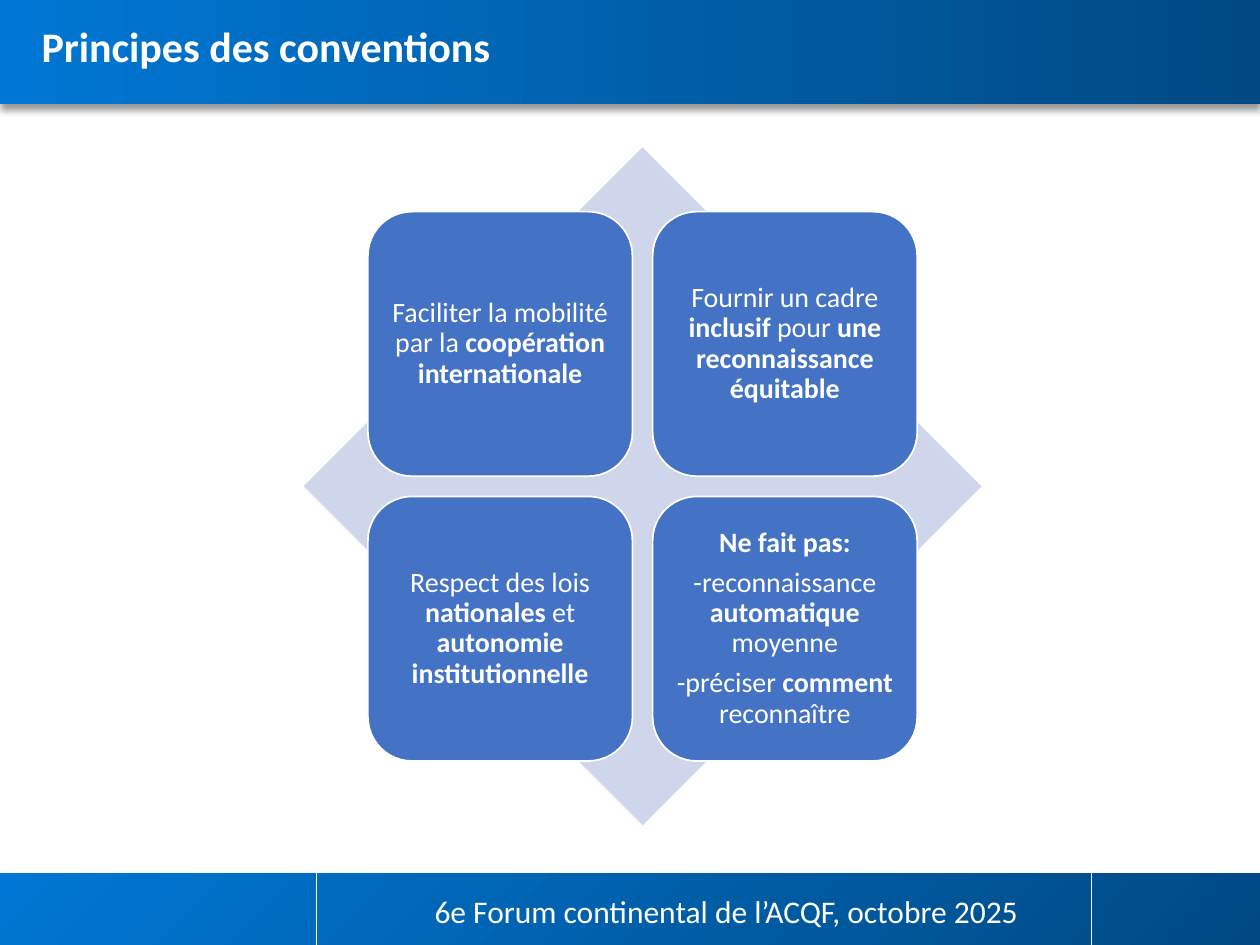
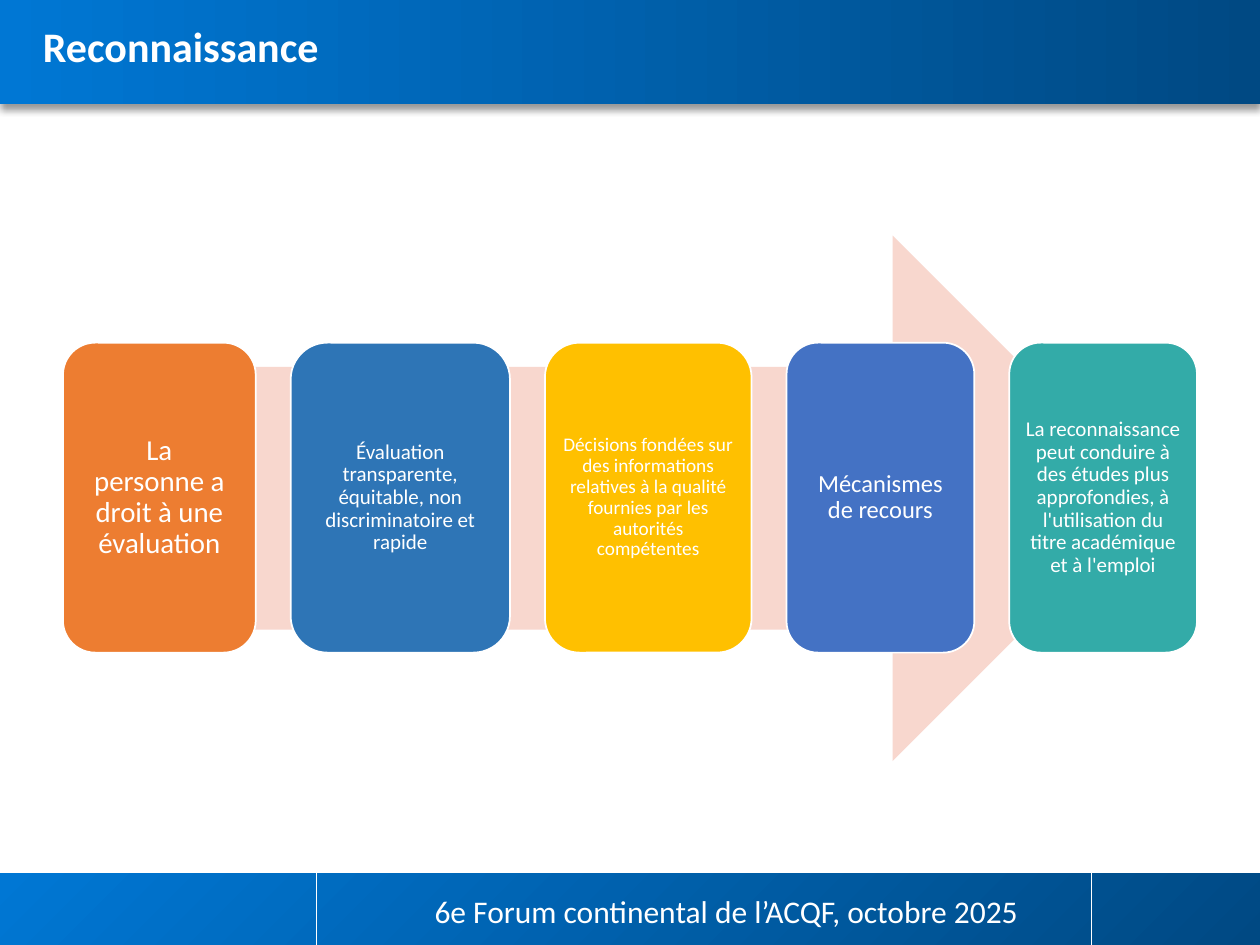
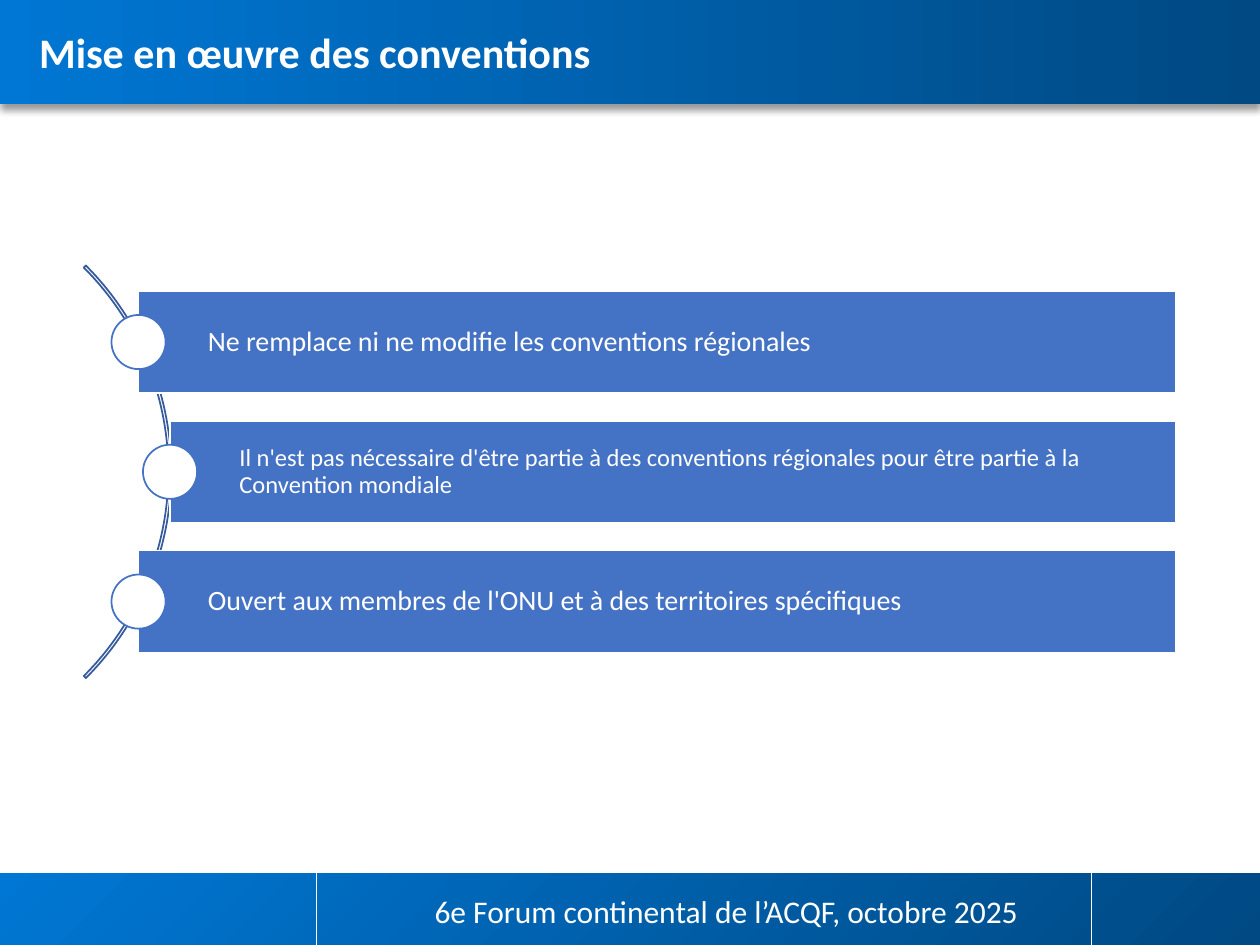
from dataclasses import dataclass

from lxml.etree import SubElement
from pptx import Presentation
from pptx.dml.color import RGBColor
from pptx.enum.shapes import MSO_CONNECTOR, MSO_SHAPE as Preset
from pptx.enum.text import MSO_ANCHOR as Anchor, MSO_AUTO_SIZE, PP_ALIGN as Align
from pptx.oxml.ns import qn
from pptx.util import Inches, Pt

FONT = "Calibri"
WHITE = "FFFFFF"
BLUE = "4472C4"
BAND_BRIGHT, BAND_DARK = "0077D4", "004983"
FOOTER = "6e Forum continental de l’ACQF, octobre 2025"
SLIDE_WIDTH, SLIDE_HEIGHT = 10, 7.5


@dataclass(frozen=True)
class Box:
    left: float
    top: float
    width: float
    height: float

    def emu(self) -> tuple:
        return tuple(Inches(v) for v in (self.left, self.top, self.width, self.height))


@dataclass(frozen=True)
class Step:
    text: str
    width: float
    color: str
    size: float
    inset: float


@dataclass(frozen=True)
class Rule:
    text: str
    left: float
    size: float


PRINCIPLES = [
    ["Faciliter la mobilité par la **coopération internationale**"],
    ["Fournir un cadre **inclusif** pour **une reconnaissance équitable**"],
    ["Respect des lois **nationales** et **autonomie institutionnelle**"],
    ["**Ne fait pas:**", "-reconnaissance **automatique** moyenne",
     "-préciser **comment** reconnaître"],
]

STEPS = [
    Step("La personne a droit à une évaluation", 1.53, "ED7D31", 16.5, 0.15),
    Step("Évaluation transparente, équitable, non discriminatoire et rapide",
         1.74, "2E75B6", 12, 0.05),
    Step("Décisions fondées sur des informations relatives à la qualité "
         "fournies par les autorités compétentes", 1.64, "FFC000", 11, 0.05),
    Step("Mécanismes de recours", 1.49, BLUE, 14, 0.06),
    Step("La reconnaissance peut conduire à des études plus approfondies, à "
         "l'utilisation du titre académique et à l'emploi", 1.49, "33ABA8", 12, 0.05),
]

RULES = [
    Rule("Ne remplace ni ne modifie les conventions régionales", 1.1, 16),
    Rule("Il n'est pas nécessaire d'être partie à des conventions régionales "
         "pour être partie à la Convention mondiale", 1.35, 14),
    Rule("Ouvert aux membres de l'ONU et à des territoires spécifiques", 1.1, 16),
]


def rgb(color: str) -> RGBColor:
    return RGBColor.from_string(color)


def style_font(font, size: float, bold: bool = False) -> None:
    font.name = FONT
    font.size = Pt(size)
    font.bold = bold
    font.color.rgb = rgb(WHITE)


def add_figure(slide, preset, box: Box, fill: str | None = None, line: str | None = None):
    figure = slide.shapes.add_shape(preset, *box.emu())
    figure.shadow.inherit = False
    if fill:
        figure.fill.solid()
        figure.fill.fore_color.rgb = rgb(fill)
    else:
        figure.fill.background()
    if line:
        figure.line.color.rgb = rgb(line)
        figure.line.width = Pt(1)
    else:
        figure.line.fill.background()
    return figure


def write(figure, paragraphs: list[str], size: float, inset: float,
          align=Align.CENTER, left_inset: float | None = None) -> None:
    frame = figure.text_frame
    frame.word_wrap = True
    frame.vertical_anchor = Anchor.MIDDLE
    frame.margin_top = frame.margin_right = frame.margin_bottom = Inches(inset)
    frame.margin_left = Inches(inset if left_inset is None else left_inset)
    for index, text in enumerate(paragraphs):
        paragraph = frame.paragraphs[0] if index == 0 else frame.add_paragraph()
        paragraph.alignment = align
        paragraph.line_spacing = 0.9
        paragraph.space_after = Pt(0.35 * size)
        for part, segment in enumerate(text.split("**")):
            if segment:
                run = paragraph.add_run()
                run.text = segment
                style_font(run.font, size, bold=part % 2 == 1)


def add_band(slide, box: Box, start: str, end: str, angle: float):
    band = add_figure(slide, Preset.RECTANGLE, box)
    band.fill.gradient()
    band.fill.gradient_angle = angle
    for stop, color in zip(band.fill.gradient_stops, (start, end)):
        stop.color.rgb = rgb(color)
    return band


def add_drop_shadow(band) -> None:
    effects = band.element.spPr.find(qn("a:effectLst"))
    shadow = SubElement(effects, qn("a:outerShdw"), blurRad=str(Pt(4)), dist=str(Pt(3)),
                        dir="5400000", algn="t", rotWithShape="0")
    color = SubElement(shadow, qn("a:srgbClr"), val="000000")
    SubElement(color, qn("a:alpha"), val="40000")


def add_divider(slide, x: float, top: float, bottom: float):
    divider = slide.shapes.add_connector(
        MSO_CONNECTOR.STRAIGHT, Inches(x), Inches(top), Inches(x), Inches(bottom))
    divider.line.color.rgb = rgb(WHITE)
    divider.line.width = Pt(0.5)
    SubElement(divider.element.spPr, qn("a:effectLst"))
    return divider


def decorate_layout(layout, slide) -> None:
    footer_band = add_band(slide, Box(0, 6.93, SLIDE_WIDTH, 0.57), BAND_DARK, BAND_BRIGHT, 135)
    header_band = add_band(slide, Box(0, 0, SLIDE_WIDTH, 0.83), BAND_BRIGHT, BAND_DARK, 0)
    add_drop_shadow(header_band)
    dividers = [add_divider(slide, 2.51, 6.92, 7.5), add_divider(slide, 8.66, 6.92, 7.5)]
    for number, part in enumerate([footer_band, header_band, *dividers], start=100):
        part.element.xpath(".//p:cNvPr")[0].set("id", str(number))
        layout.shapes.element.append(part.element)


def set_title(slide, text: str, box: Box, align=Align.LEFT, spacing: float = 0.9) -> None:
    title = slide.shapes.title
    title.left, title.top, title.width, title.height = box.emu()
    frame = title.text_frame
    frame.text = text
    frame.auto_size = MSO_AUTO_SIZE.NONE
    frame.vertical_anchor = Anchor.TOP
    heading = frame.paragraphs[0]
    heading.alignment = align
    heading.line_spacing = spacing
    style_font(heading.runs[0].font, 24, bold=True)


def add_footer(slide) -> None:
    footer = slide.shapes.add_textbox(*Box(3.35, 7.03, 5.09, 0.71).emu())
    footer.text_frame.word_wrap = True
    footer.text_frame.text = FOOTER
    style_font(footer.text_frame.paragraphs[0].runs[0].font, 18)


def draw_principles(slide) -> None:
    set_title(slide, "Principes des conventions", Box(0.23, 0.16, 5.34, 0.63))
    add_figure(slide, Preset.DIAMOND, Box(2.41, 1.17, 5.38, 5.38), "CFD5EA")
    side, pitch = 2.1, 2.26
    for index, paragraphs in enumerate(PRINCIPLES):
        row, column = divmod(index, 2)
        card = add_figure(slide, Preset.ROUNDED_RECTANGLE,
                          Box(2.92 + column * pitch, 1.68 + row * pitch, side, side),
                          BLUE, WHITE)
        write(card, paragraphs, 16, 0.07)


def draw_recognition(slide) -> None:
    set_title(slide, "Reconnaissance", Box(-0.31, 0.16, 3.49, 0.5), Align.CENTER)
    add_figure(slide, Preset.RIGHT_ARROW, Box(0.98, 1.87, 8.19, 4.17), "F8D7CE")
    margin = 0.5
    free_width = SLIDE_WIDTH - 2 * margin - sum(step.width for step in STEPS)
    gap = free_width / (len(STEPS) - 1)
    left = margin
    for step in STEPS:
        card = add_figure(slide, Preset.ROUNDED_RECTANGLE,
                          Box(left, 2.72, step.width, 2.46), step.color, WHITE)
        write(card, [step.text], step.size, step.inset)
        left += step.width + gap


def draw_implementation(slide) -> None:
    set_title(slide, "Mise en œuvre des conventions", Box(0.21, 0.16, 6.97, 0.5), spacing=1.0)
    arc = add_figure(slide, Preset.BLOCK_ARC, Box(-3.27, 1.43, 4.63, 4.63), line="365B9D")
    for index, value in enumerate((189, 27, 0.005)):
        arc.adjustments[index] = value
    right, height, pitch, diameter = 9.33, 0.81, 1.03, 0.43
    for index, rule in enumerate(RULES):
        top = 2.31 + index * pitch
        bar = add_figure(slide, Preset.RECTANGLE,
                         Box(rule.left, top, right - rule.left, height), BLUE, WHITE)
        write(bar, [rule.text], rule.size, 0.04, Align.LEFT, left_inset=0.55)
        add_figure(slide, Preset.OVAL,
                   Box(rule.left - diameter / 2, top + (height - diameter) / 2,
                       diameter, diameter), WHITE, BLUE)


def main() -> None:
    deck = Presentation()
    deck.slide_width, deck.slide_height = Inches(SLIDE_WIDTH), Inches(SLIDE_HEIGHT)
    layout = deck.slide_layouts[5]
    for index, draw in enumerate((draw_principles, draw_recognition, draw_implementation)):
        slide = deck.slides.add_slide(layout)
        if index == 0:
            decorate_layout(layout, slide)
        draw(slide)
        add_footer(slide)
    deck.save("out.pptx")


if __name__ == "__main__":
    main()
